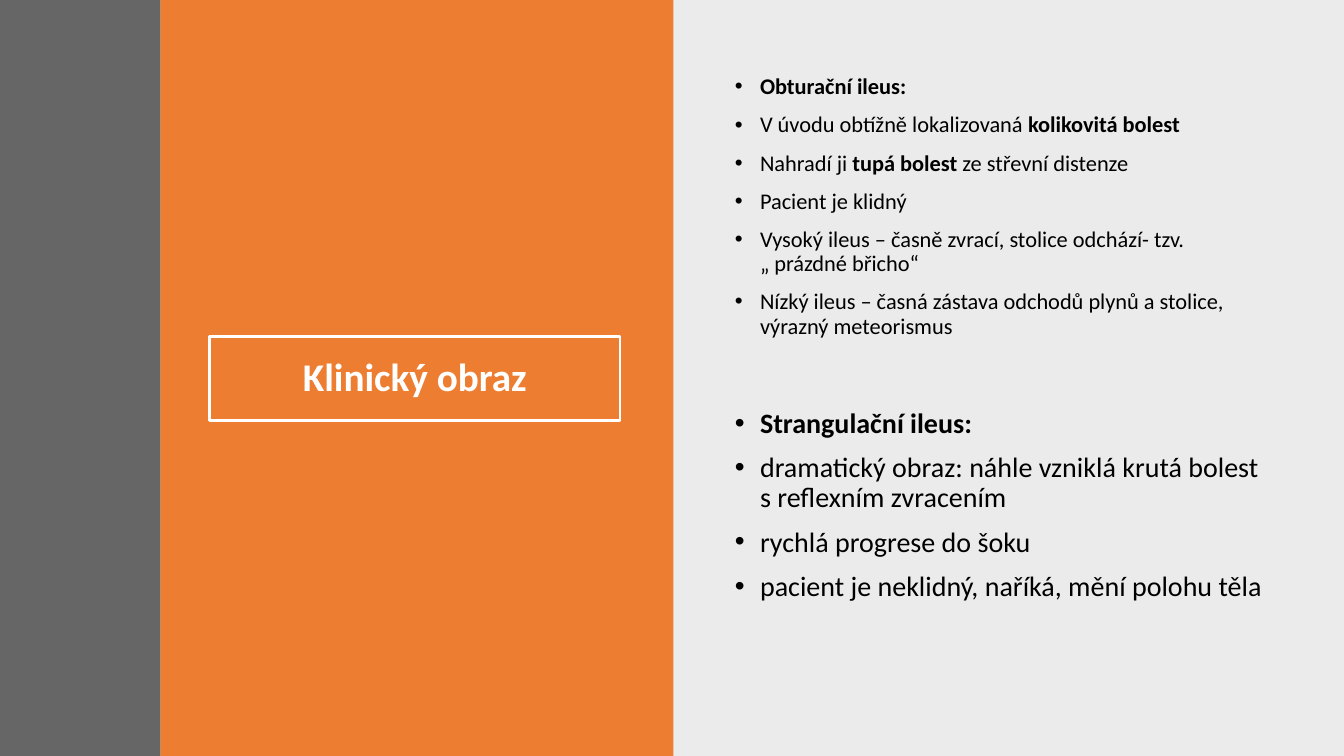
"""Build the two-panel slide on the clinical picture of ileus."""
from dataclasses import dataclass

from lxml import etree
from pptx import Presentation
from pptx.dml.color import RGBColor
from pptx.enum.shapes import MSO_SHAPE
from pptx.enum.text import MSO_ANCHOR, MSO_AUTO_SIZE, PP_ALIGN
from pptx.oxml.ns import qn
from pptx.slide import Slide
from pptx.util import Inches, Pt

RECT = MSO_SHAPE.RECTANGLE
TOP, MIDDLE = MSO_ANCHOR.TOP, MSO_ANCHOR.MIDDLE
NO_FIT = MSO_AUTO_SIZE.NONE
LEFT, CENTER = PP_ALIGN.LEFT, PP_ALIGN.CENTER
WIDTH, HEIGHT = Inches(13.33), Inches(7.5)


@dataclass(frozen=True)
class Theme:
    """Colours, font and type sizes of the slide."""
    font: str = "Calibri"
    ink: str = "000000"
    white: str = "FFFFFF"
    accent: str = "ED7D31"
    dark: str = "404040"
    title: int = 28
    small: int = 16
    large: int = 20
    spacing: float = 0.9
    before: int = 10
    indent: float = 0.25


@dataclass(frozen=True)
class Box:
    """A rectangle in percent of the slide's width and height."""
    left: float
    top: float
    width: float
    height: float

    def frame(self) -> dict[str, int]:
        """Return the position and size in slide units."""
        return {"left": int(WIDTH * self.left / 100), "top": int(HEIGHT * self.top / 100),
                "width": int(WIDTH * self.width / 100), "height": int(HEIGHT * self.height / 100)}


@dataclass(frozen=True)
class Panel:
    """A full-height colour band with its opacity in percent."""
    box: Box
    color: str
    opacity: int = 100


@dataclass(frozen=True)
class Section:
    """A bullet list whose lines are (text, bold) runs."""
    box: Box
    size: int
    lines: list[list[tuple[str, bool]]]


THEME = Theme()
PANELS = [
    Panel(Box(50, 0, 50, 100), THEME.ink, 8),
    Panel(Box(11.93, 0, 38.18, 100), THEME.accent),
    Panel(Box(0, 0, 11.93, 100), THEME.dark, 80),
]
TITLE_BOX = Box(15.6, 44.53, 30.53, 11.07)
SECTIONS = [
    Section(Box(53.94, 9.33, 41.49, 37.2), THEME.small, [
        [("Obturační ileus:", True)],
        [("V úvodu obtížně lokalizovaná ", False), ("kolikovitá bolest", True)],
        [("Nahradí ji ", False), ("tupá bolest ", True), ("ze střevní distenze", False)],
        [("Pacient je klidný", False)],
        [("Vysoký ileus – časně zvrací, stolice odchází- tzv. „ prázdné břicho“", False)],
        [("Nízký ileus – časná zástava odchodů plynů a stolice, výrazný meteorismus", False)],
    ]),
    Section(Box(53.94, 53.47, 41.49, 37.2), THEME.large, [
        [("Strangulační ileus:", True)],
        [("dramatický obraz: náhle vzniklá krutá bolest s reflexním zvracením", False)],
        [("rychlá progrese do šoku", False)],
        [("pacient je neklidný, naříká, mění polohu těla", False)],
    ]),
]


def assign(target: object, values: dict) -> None:
    """Set each named attribute on the target."""
    for name, value in values.items():
        setattr(target, name, value)


def add_run(p, text: str, size: int, color: str, bold: bool) -> None:
    """Append a formatted run to a paragraph."""
    r = p.add_run()
    r.text = text
    assign(r.font, {"name": THEME.font, "size": Pt(size), "bold": bold})
    r.font.color.rgb = RGBColor.from_string(color)


def add_panel(s: Slide, panel: Panel) -> None:
    """Draw a colour band."""
    sp = s.shapes.add_shape(RECT, **panel.box.frame())
    sp.shadow.inherit = False
    sp.line.fill.background()
    sp.fill.solid()
    sp.fill.fore_color.rgb = RGBColor.from_string(panel.color)
    if panel.opacity < 100:
        color = sp.fill._xPr.find(f".//{qn('a:srgbClr')}")
        etree.SubElement(color, qn("a:alpha"), val=str(panel.opacity * 1000))


def add_title(s: Slide, text: str) -> None:
    """Place the framed title above the panels."""
    sp = s.shapes.title
    s.shapes._spTree.append(sp._element)
    assign(sp, TITLE_BOX.frame())
    sp.line.color.rgb = RGBColor.from_string(THEME.white)
    sp.line.width = Pt(2)
    tf = sp.text_frame
    assign(tf, {"word_wrap": True, "auto_size": NO_FIT, "vertical_anchor": MIDDLE})
    p = tf.paragraphs[0]
    assign(p, {"alignment": CENTER, "line_spacing": THEME.spacing})
    add_run(p, text, THEME.title, THEME.white, True)


def add_section(s: Slide, section: Section) -> None:
    """Write a bullet list."""
    tf = s.shapes.add_textbox(**section.box.frame()).text_frame
    assign(tf, {"word_wrap": True, "auto_size": NO_FIT, "vertical_anchor": TOP})
    indent = Inches(THEME.indent)
    for i, line in enumerate(section.lines):
        p = tf.add_paragraph() if i else tf.paragraphs[0]
        assign(p, {"alignment": LEFT, "line_spacing": THEME.spacing,
                   "space_before": Pt(THEME.before)})
        pPr = p._p.get_or_add_pPr()
        pPr.set("marL", str(indent))
        pPr.set("indent", str(-indent))
        etree.SubElement(pPr, qn("a:buFont"), typeface="Arial")
        etree.SubElement(pPr, qn("a:buChar"), char="•")
        for text, bold in line:
            add_run(p, text, section.size, THEME.ink, bold)


def main() -> None:
    """Assemble and save the slide."""
    prs = Presentation()
    assign(prs, {"slide_width": WIDTH, "slide_height": HEIGHT})
    s = prs.slides.add_slide(prs.slide_layouts[5])
    for panel in PANELS:
        add_panel(s, panel)
    add_title(s, "Klinický obraz")
    for section in SECTIONS:
        add_section(s, section)
    prs.save("out.pptx")


if __name__ == "__main__":
    main()
